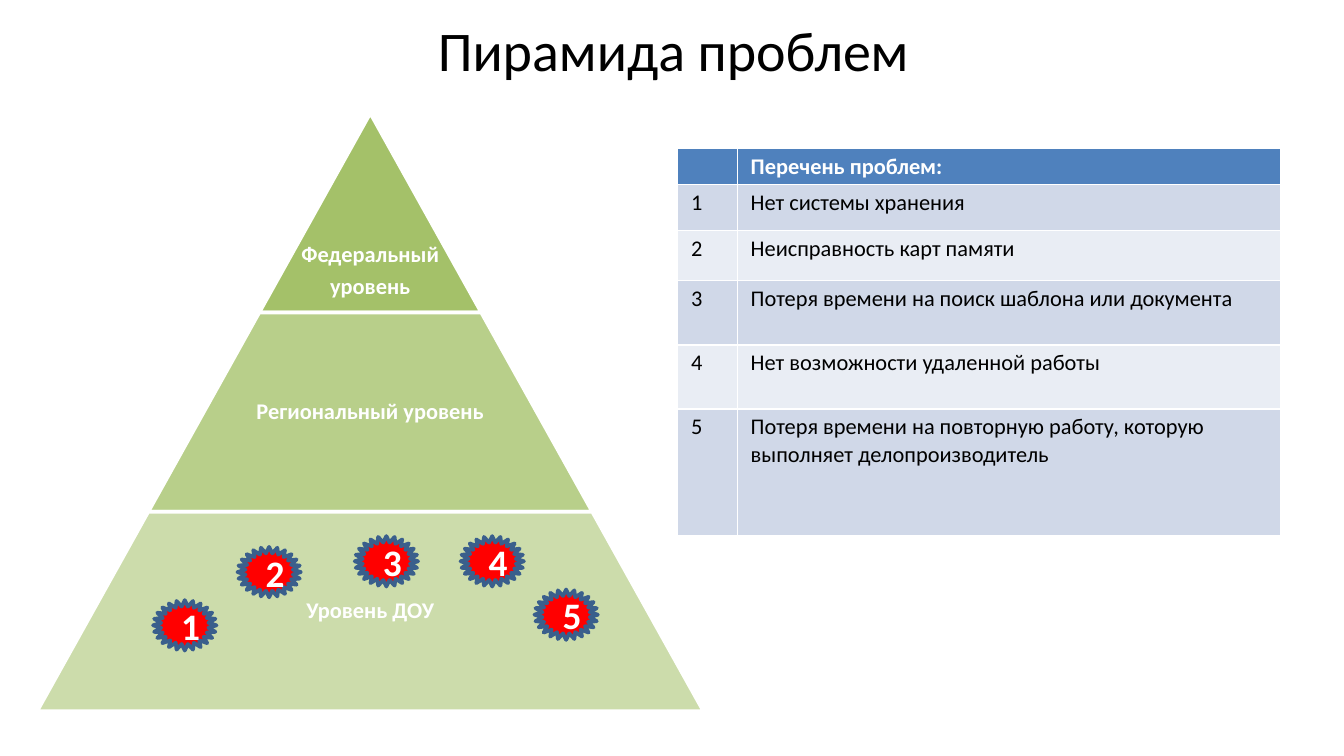
from lxml.etree import SubElement
from pptx import Presentation
from pptx.dml.color import RGBColor
from pptx.enum.shapes import MSO_SHAPE
from pptx.enum.text import MSO_ANCHOR, PP_ALIGN
from pptx.oxml.ns import qn
from pptx.util import Pt

# Content
TITLE = "Пирамида проблем"
TIERS = [  # lines, opacity in percent, anchor
    (["Федеральный", "уровень"], 90, MSO_ANCHOR.BOTTOM),
    (["Региональный уровень"], 70, MSO_ANCHOR.MIDDLE),
    (["Уровень ДОУ"], 50, MSO_ANCHOR.MIDDLE),
]
TABLE_HEADER = "Перечень проблем:"
PROBLEMS = [
    "Нет системы хранения",
    "Неисправность карт памяти",
    "Потеря времени на поиск шаблона или документа",
    "Нет возможности удаленной работы",
    "Потеря времени на повторную работу, которую выполняет делопроизводитель",
]
BADGE_POSITIONS = [(82, 321.5), (127.2, 293), (190, 287.2), (246.7, 287.2), (286.3, 315.8)]

# Look and layout, in points
FONT = "Calibri"
WHITE = RGBColor(0xFF, 0xFF, 0xFF)
BLACK = RGBColor(0x00, 0x00, 0x00)
GREEN = RGBColor(0x9B, 0xBB, 0x59)
RED = RGBColor(0xFF, 0x00, 0x00)
NAVY = RGBColor(0x3A, 0x5F, 0x8C)
HEADER_BLUE = RGBColor(0x4F, 0x81, 0xBD)
BANDS = [RGBColor(0xD0, 0xD8, 0xE8), RGBColor(0xE9, 0xED, 0xF4)]
PYRAMID_CENTER, PYRAMID_TOP = 198.4, 60.6
TIER_HEIGHT, TIER_WIDTH_STEP = 106.8, 119
BADGE_WIDTH, BADGE_HEIGHT = 34, 27
TABLE_LEFT, TABLE_TOP = 363, 79.4
COLUMN_WIDTHS = [32, 291]
ROW_HEIGHTS = [19.3, 24.7, 26.7, 34.6, 34.4, 68]


def set_font(paragraph, size, color, bold=False):
    font = paragraph.font
    font.name, font.size, font.bold = FONT, Pt(size), bold
    font.color.rgb = color


def add_filled_shape(slide, kind, box, fill, line):
    shape = slide.shapes.add_shape(kind, *map(Pt, box))
    shape.shadow.inherit = False
    shape.fill.solid()
    shape.fill.fore_color.rgb = fill
    shape.line.color.rgb = line
    shape.line.width = Pt(2)
    return shape


def add_tier(slide, level, lines, opacity, anchor):
    width = TIER_WIDTH_STEP * (level + 1)
    box = (PYRAMID_CENTER - width / 2, PYRAMID_TOP + level * TIER_HEIGHT, width, TIER_HEIGHT)
    shape = add_filled_shape(slide, MSO_SHAPE.TRAPEZOID, box, GREEN, WHITE)
    shape.adjustments[0] = TIER_WIDTH_STEP / 2 / TIER_HEIGHT
    color = shape.fill._xPr.find(qn("a:solidFill"))[0]
    SubElement(color, qn("a:alpha"), val=str(opacity * 1000))

    frame = slide.shapes.add_textbox(*map(Pt, box)).text_frame
    frame.word_wrap = True
    frame.vertical_anchor = anchor
    frame.margin_left = frame.margin_right = frame.margin_top = Pt(2)
    frame.margin_bottom = Pt(7 if anchor == MSO_ANCHOR.BOTTOM else 2)
    frame.text = "\n".join(lines)
    for paragraph in frame.paragraphs:
        paragraph.alignment = PP_ALIGN.CENTER
        paragraph.line_spacing = 0.9
        paragraph.space_after = Pt(4.2)
        set_font(paragraph, 12, WHITE, bold=True)


def add_problem_table(slide):
    rows = [("", TABLE_HEADER)] + [(str(n), text) for n, text in enumerate(PROBLEMS, 1)]
    table = slide.shapes.add_table(
        len(rows), len(COLUMN_WIDTHS), Pt(TABLE_LEFT), Pt(TABLE_TOP),
        Pt(sum(COLUMN_WIDTHS)), Pt(sum(ROW_HEIGHTS))).table
    for column, width in zip(table.columns, COLUMN_WIDTHS):
        column.width = Pt(width)
    for index, (row, height, texts) in enumerate(zip(table.rows, ROW_HEIGHTS, rows)):
        row.height = Pt(height)
        header = index == 0
        for cell, text in zip(row.cells, texts):
            cell.fill.solid()
            cell.fill.fore_color.rgb = HEADER_BLUE if header else BANDS[(index - 1) % 2]
            cell.margin_left = cell.margin_right = Pt(7.2)
            cell.margin_top = cell.margin_bottom = Pt(2.5)
            cell.text = text
            paragraph = cell.text_frame.paragraphs[0]
            set_font(paragraph, 12, WHITE if header else BLACK, bold=header)
            if not text:  # keeps the empty cell from stretching its row
                SubElement(paragraph._p, qn("a:endParaRPr"), sz="1200")


presentation = Presentation()
presentation.slide_width, presentation.slide_height = Pt(720), Pt(405)
slide = presentation.slides.add_slide(presentation.slide_layouts[5])

# Title
title = slide.shapes.title
title.left, title.top, title.width, title.height = Pt(36.7), Pt(15), Pt(648), Pt(22.4)
title.text = TITLE
title.text_frame.vertical_anchor = MSO_ANCHOR.MIDDLE
title.text_frame.paragraphs[0].alignment = PP_ALIGN.CENTER
set_font(title.text_frame.paragraphs[0], 30, BLACK)

# Pyramid
for level, tier in enumerate(TIERS):
    add_tier(slide, level, *tier)

# Problem list
add_problem_table(slide)

# Numbered badges
for number, (left, top) in enumerate(BADGE_POSITIONS, 1):
    badge = add_filled_shape(slide, MSO_SHAPE.STAR_24_POINT,
                             (left, top, BADGE_WIDTH, BADGE_HEIGHT), RED, NAVY)
    badge.text_frame.text = str(number)
    badge.text_frame.vertical_anchor = MSO_ANCHOR.MIDDLE
    badge.text_frame.paragraphs[0].alignment = PP_ALIGN.CENTER
    set_font(badge.text_frame.paragraphs[0], 20, WHITE, bold=True)

presentation.save("out.pptx")
